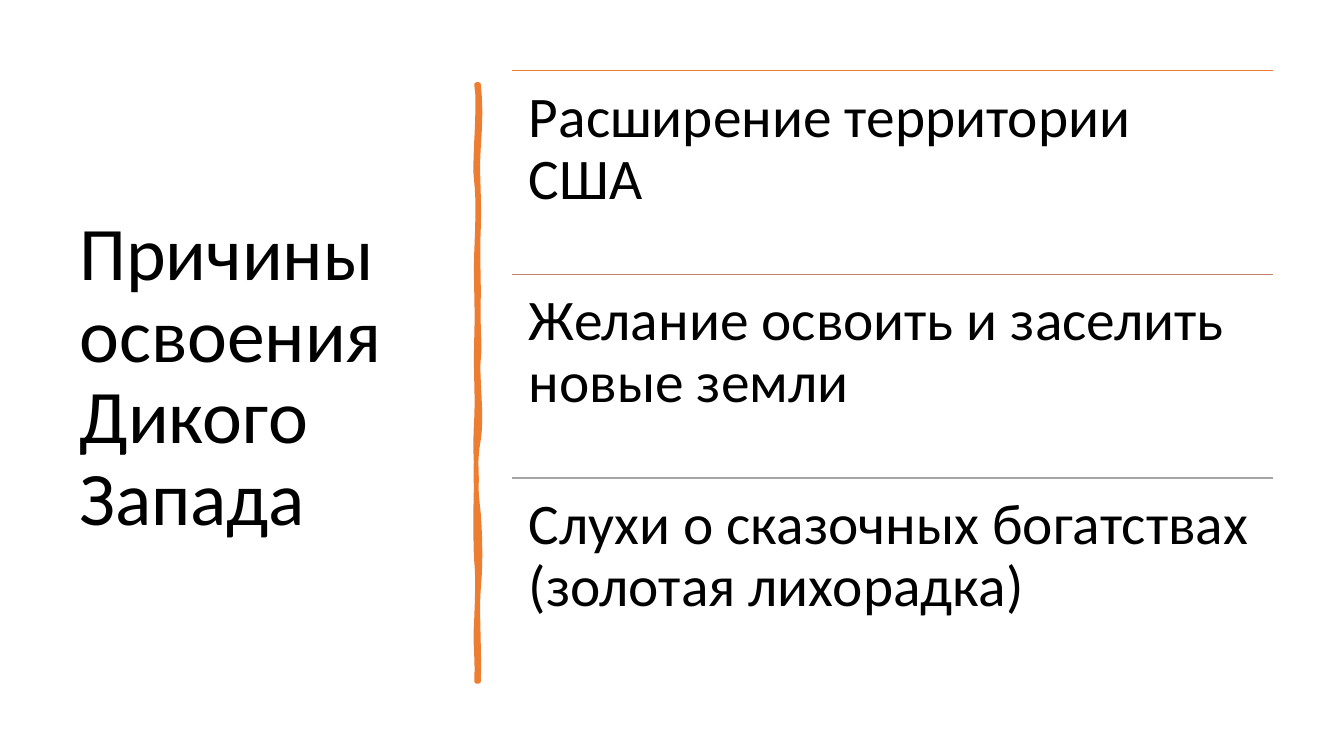
from lxml.etree import SubElement as Sub
from pptx import Presentation
from pptx.dml.color import RGBColor as Rgb
from pptx.enum.shapes import MSO_CONNECTOR as Conn
from pptx.enum.text import MSO_ANCHOR as Anchor
from pptx.oxml.ns import qn
from pptx.util import Cm, Pt

COLORS = {
    "text": "000000",
    "orange": "ED7D31",
    "brown": "C48170",
    "gray": "A5A5A5",
}
FONT = "Calibri"
TITLE = "Причины освоения Дикого Запада"
CAUSES = [
    ("Расширение территории США", "orange"),
    ("Желание освоить и заселить новые земли", "brown"),
    ("Слухи о сказочных богатствах (золотая лихорадка)", "gray"),
]

# Brush edges in cm: x, first y, then curves (sway 1, y 1, sway 2, y 2, end y)
RIGHT = (12.06, 2.13, [
    (0.05, 2.59, 0.05, 3.02, 3.71),
    (-0.05, 4.39, 0.03, 4.95, 5.74),
    (-0.03, 6.53, 0, 6.65, 7.47),
    (-0.03, 8.26, 0.05, 8.69, 9.04),
    (-0.05, 9.4, 0.1, 10.52, 11.07),
    (-0.1, 11.61, -0.08, 12.29, 12.95),
    (0.05, 13.61, 0.05, 14.33, 14.83),
    (-0.05, 15.32, 0.03, 16.51, 17.17),
])
LEFT = (12.01, 17.17, [
    (0.03, 16.41, -0.05, 16.36, 15.57),
    (0.03, 14.81, 0.03, 14.48, 14.15),
    (-0.03, 13.82, -0.03, 12.57, 12.12),
    (0, 11.66, -0.05, 11.3, 10.54),
    (0.03, 9.8, -0.03, 9.47, 8.51),
    (0.03, 7.57, -0.03, 7.14, 6.35),
    (0.03, 5.54, 0.05, 5.08, 4.6),
    (-0.08, 4.14, 0.1, 2.64, 2.13),
])
STEPS = 8

LIST_X, LIST_Y, LIST_W = 12.9, 1.78, 19.18
ROW_H = 5.13


def color(name):
    return Rgb.from_string(COLORS[name])


def add_text(slide, text, box, size, inset, anchor):
    frame = slide.shapes.add_textbox(*map(Cm, box)).text_frame
    frame.word_wrap = True
    frame.vertical_anchor = anchor
    frame.margin_left = frame.margin_right = Cm(inset[0])
    frame.margin_top = frame.margin_bottom = Cm(inset[1])
    frame.text = text
    para = frame.paragraphs[0]
    para.line_spacing = 0.9
    font = para.runs[0].font
    font.name, font.size = FONT, Pt(size)
    font.color.rgb = color("text")


def add_rule(slide, y, name):
    rule = slide.shapes.add_connector(
        Conn.STRAIGHT, Cm(LIST_X), Cm(y), Cm(LIST_X + LIST_W), Cm(y))
    rule.line.color.rgb = color(name)
    rule.line.width = Pt(1)
    Sub(rule._element.spPr, qn("a:effectLst"))


def trace(edge):
    """Return points along the Bezier curves of one brush edge."""
    x, y, curves = edge
    dots = [(Cm(x), Cm(y))]
    for sway1, y1, sway2, y2, end in curves:
        for step in range(1, STEPS + 1):
            t = step / STEPS
            u = 1 - t
            a, b = 3 * u * u * t, 3 * u * t * t
            dots.append((Cm(x + a * sway1 + b * sway2),
                         Cm(u ** 3 * y + a * y1 + b * y2 + t ** 3 * end)))
        y = end
    return dots


def add_brush(slide):
    dots = trace(RIGHT) + trace(LEFT)
    pen = slide.shapes.build_freeform(*dots[0])
    pen.add_line_segments(dots[1:], close=True)
    brush = pen.convert_to_shape()
    brush.shadow.inherit = False
    brush.fill.solid()
    brush.fill.fore_color.rgb = color("orange")
    brush.line.color.rgb = color("orange")
    brush.line.width = Pt(3.25)


def main():
    deck = Presentation()
    deck.slide_width, deck.slide_height = Cm(33.87), Cm(19.05)
    slide = deck.slides.add_slide(deck.slide_layouts[6])
    add_text(slide, TITLE, (1.75, 1.78, 9.5, 15.52), 54,
             (0.25, 0.13), Anchor.MIDDLE)
    add_brush(slide)
    for row, (cause, name) in enumerate(CAUSES):
        y = LIST_Y + row * ROW_H
        add_rule(slide, y, name)
        add_text(slide, cause, (LIST_X, y, LIST_W, ROW_H), 41,
                 (0.43, 0.43), Anchor.TOP)
    deck.save("out.pptx")


if __name__ == "__main__":
    main()
